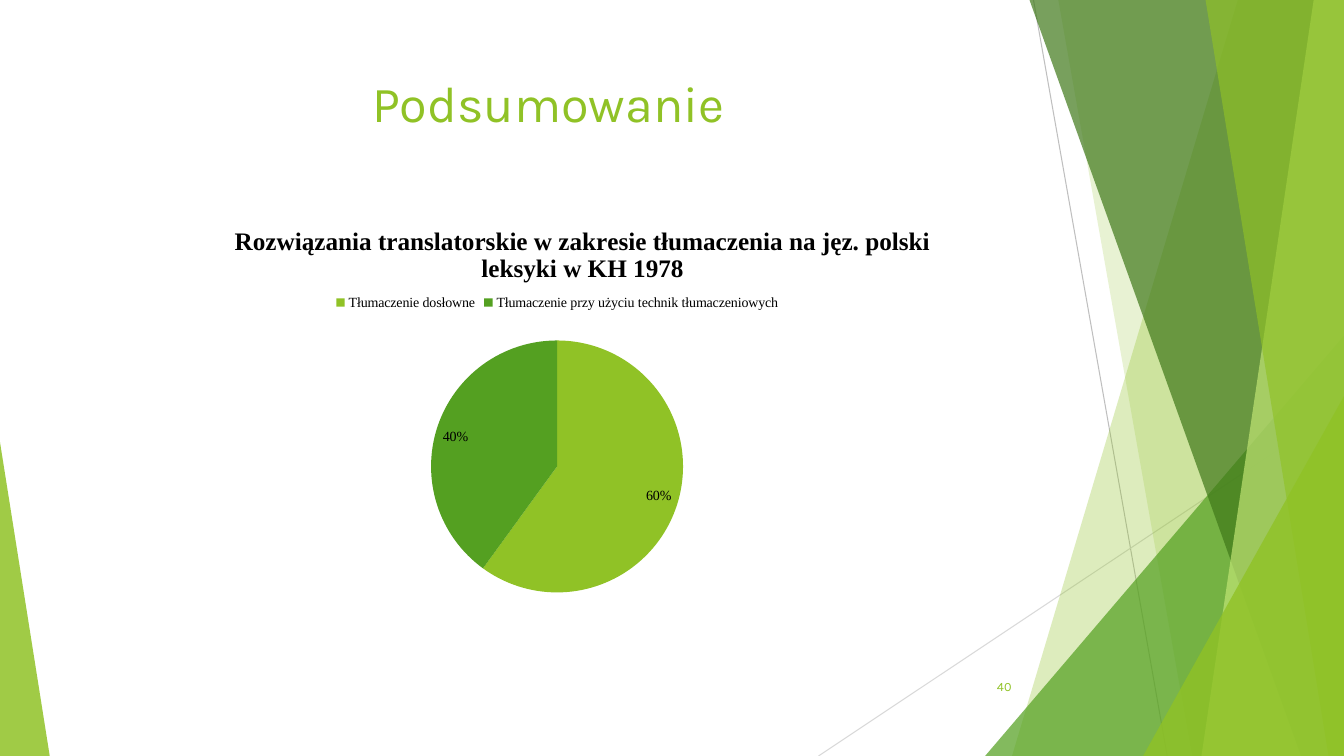
from lxml import etree
from pptx import Presentation
from pptx import util as u
from pptx.chart.data import CategoryChartData
from pptx.dml.color import RGBColor
from pptx.enum import chart as ch, shapes, text
from pptx.oxml import parse_xml
from pptx.oxml.ns import nsdecls, qn

# Positions are in columns and rows of a 100 x 100 grid over the slide.
WIDTH, HEIGHT = u.Inches(13.333), u.Inches(7.5)
GREEN, DARK = "90C226", "54A021"


def cols(n):
    return round(n * WIDTH / 100)


def rows(n):
    return round(n * HEIGHT / 100)


def box(left, top, width, height):
    return cols(left), rows(top), cols(width), rows(height)


def rgb(color):
    return RGBColor.from_string(color)


def paint(sp, color, opacity):
    """Fill a shape with a colour at an opacity in percent, without outline."""
    sp.shadow.inherit = False
    sp.line.fill.background()
    sp.fill.solid()
    sp.fill.fore_color.rgb = rgb(color)
    clr = sp.fill._xPr.find(".//" + qn("a:srgbClr"))
    etree.SubElement(clr, qn("a:alpha")).set("val", str(opacity * 1000))


def add_line(s, x1, y1, x2, y2, color):
    line = s.shapes.add_connector(shapes.MSO_CONNECTOR.STRAIGHT,
                                  cols(x1), rows(y1), cols(x2), rows(y2))
    line.line.color.rgb = rgb(color)
    line.line.width = u.Pt(0.75)
    etree.SubElement(line._element.spPr, qn("a:effectLst"))


def add_panel(s, top, bottom, color, opacity):
    """Full-height panel from a slanted left edge to the right slide edge."""
    fb = s.shapes.build_freeform(cols(top), 0)
    fb.add_line_segments([(cols(100), 0), (cols(100), rows(100)),
                          (cols(bottom), rows(100))])
    paint(fb.convert_to_shape(), color, opacity)


def add_corner(s, left, top, width, apex, color, opacity):
    """Right triangle standing on the bottom slide edge."""
    sp = s.shapes.add_shape(shapes.MSO_SHAPE.ISOSCELES_TRIANGLE,
                            *box(left, top, width, 100 - top))
    sp.adjustments[0] = apex
    paint(sp, color, opacity)


def add_background(s):
    add_line(s, 76.9, 0, 86.85, 100, "BFBFBF")
    add_line(s, 100, 53.7, 60.9, 100, "D9D9D9")
    add_panel(s, 92.1, 75.3, GREEN, 30)
    add_panel(s, 78.75, 88.7, GREEN, 20)
    add_corner(s, 73.3, 44.4, 26.7, 1, DARK, 72)
    add_panel(s, 76.6, 96.8, "3F7819", 70)
    add_panel(s, 97.75, 89.4, "C0E474", 70)
    add_panel(s, 89.7, 98.85, GREEN, 65)
    add_corner(s, 85.05, 52.4, 14.95, 1, GREEN, 80)
    add_corner(s, 0, 58.5, 3.7, 0, GREEN, 85)


def write(sp, words, size, align, anchor):
    tf = sp.text_frame
    tf.word_wrap = True
    tf.vertical_anchor = anchor
    p = tf.paragraphs[0]
    p.text = words
    p.alignment = align
    p.font.name = "Karla"
    p.font.size = u.Pt(size)
    p.font.color.rgb = rgb(GREEN)


def set_font(font, size, bold=False):
    font.name = "Times New Roman"
    font.size = u.Pt(size)
    font.bold = bold
    font.color.rgb = rgb("000000")


def place(parent, after, **shares):
    """Give a chart part a manual layout in shares of the chart."""
    for old in parent.findall(qn("c:layout")):
        parent.remove(old)
    modes = "".join(f'<c:{k}Mode val="edge"/>' for k in "xy")
    values = "".join(f'<c:{k} val="{v}"/>' for k, v in shares.items())
    target = '<c:layoutTarget val="inner"/>' if "w" in shares else ""
    layout = parse_xml(f'<c:layout {nsdecls("c")}><c:manualLayout>{target}'
                       f'{modes}{values}</c:manualLayout></c:layout>')
    if after is None:
        parent.insert(0, layout)
    else:
        after.addnext(layout)


def add_pie(s):
    data = CategoryChartData()
    data.categories = ["Tłumaczenie dosłowne",
                       "Tłumaczenie przy użyciu technik tłumaczeniowych"]
    data.add_series("Series 1", (60, 40))
    chart = s.shapes.add_chart(ch.XL_CHART_TYPE.PIE,
                               *box(6.2, 26.4, 70.5, 56.5), data).chart
    set_font(chart.font, 10)

    chart.has_title = True
    p = chart.chart_title.text_frame.paragraphs[0]
    p.text = ("Rozwiązania translatorskie w zakresie tłumaczenia "
              "na jęz. polski leksyki w KH 1978")
    set_font(p.font, 18, True)
    title = chart.chart_title._element
    place(title, title.find(qn("c:tx")), x=0.155, y=0.05)

    chart.has_legend = True
    chart.legend.position = ch.XL_LEGEND_POSITION.TOP
    chart.legend.include_in_layout = False
    set_font(chart.legend.font, 10)

    plot = chart.plots[0]
    plot.vary_by_categories = True
    place(plot._element.getparent(), None, x=0.08, y=0.33, w=0.84, h=0.59)
    for i, color in enumerate((GREEN, DARK)):
        fill = plot.series[0].points[i].format.fill
        fill.solid()
        fill.fore_color.rgb = rgb(color)
    plot.has_data_labels = True
    labels = plot.data_labels
    labels.show_value = False
    labels.show_percentage = True
    labels.number_format = "0%"
    labels.number_format_is_linked = False
    labels.position = ch.XL_LABEL_POSITION.INSIDE_END
    set_font(labels.font, 10)


def main():
    prs = Presentation()
    prs.slide_width, prs.slide_height = WIDTH, HEIGHT
    s = prs.slides.add_slide(prs.slide_layouts[5])
    add_background(s)

    title = s.shapes.title
    title.left, title.top, title.width, title.height = box(5.55, 8.9, 70.5, 19.2)
    write(title, "Podsumowanie", 36, text.PP_ALIGN.CENTER, text.MSO_ANCHOR.TOP)
    number = s.shapes.add_textbox(*box(70.4, 88.1, 5.6, 5.3))
    write(number, "40", 9, text.PP_ALIGN.RIGHT, text.MSO_ANCHOR.MIDDLE)
    add_pie(s)

    prs.save("out.pptx")


if __name__ == "__main__":
    main()
